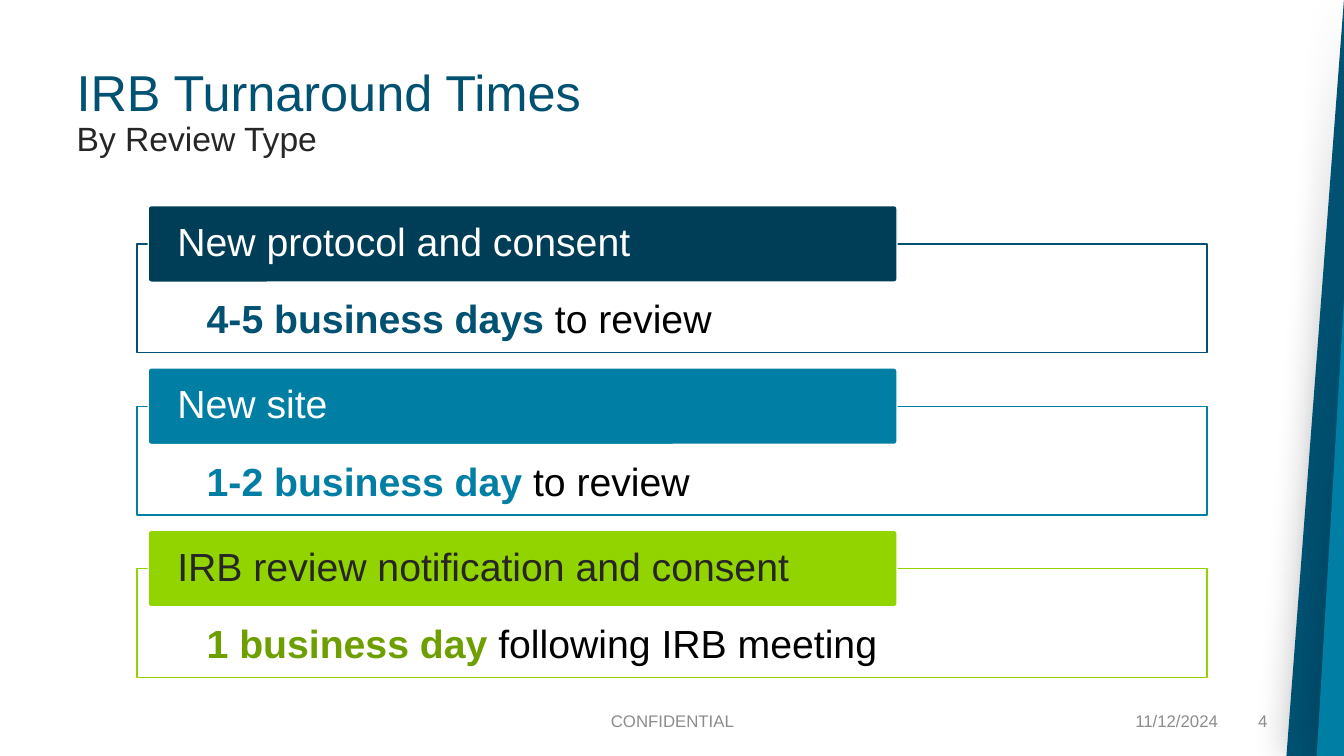
from lxml import etree
from pptx import Presentation
from pptx.dml.color import RGBColor
from pptx.enum.shapes import MSO_SHAPE
from pptx.enum.text import MSO_ANCHOR, MSO_AUTO_SIZE, PP_ALIGN
from pptx.oxml import parse_xml
from pptx.util import Inches, Pt

TRIANGLE, ROUND, RECT = (
    MSO_SHAPE.RIGHT_TRIANGLE, MSO_SHAPE.ROUNDED_RECTANGLE, MSO_SHAPE.RECTANGLE)
MIDDLE, FIXED = MSO_ANCHOR.MIDDLE, MSO_AUTO_SIZE.NONE
LEFT, CENTER, RIGHT = PP_ALIGN.LEFT, PP_ALIGN.CENTER, PP_ALIGN.RIGHT

WHITE = RGBColor(0xFF, 0xFF, 0xFF)
BLACK = RGBColor(0, 0, 0)
INK = RGBColor(0x26, 0x26, 0x26)
GRAY = RGBColor(0x8C, 0x8C, 0x8C)
NAVY = RGBColor(0x00, 0x3D, 0x56)
BLUE = RGBColor(0x00, 0x51, 0x72)
TEAL = RGBColor(0x00, 0x7E, 0xA3)
LIME = RGBColor(0x92, 0xD4, 0x00)
GREEN = RGBColor(0x6E, 0x9F, 0x00)
FONT = "Arial"

GLOW = """<a:effectLst xmlns:a="http://schemas.openxmlformats.org/drawingml/2006/main">
<a:outerShdw blurRad="317500" dist="0" algn="ctr" rotWithShape="0">
<a:srgbClr val="000000"><a:alpha val="25000"/></a:srgbClr></a:outerShdw></a:effectLst>"""

# Heading, bar fill, bar text, frame line, lead text, lead color, rest
REVIEWS = [
    ("New protocol and consent", NAVY, WHITE, BLUE,
     "4-5 business days ", BLUE, "to review"),
    ("New site", TEAL, WHITE, TEAL,
     "1-2 business day ", TEAL, "to review"),
    ("IRB review notification and consent", LIME, INK, LIME,
     "1 business day ", GREEN, "following IRB meeting"),
]


def add_run(para, text, size, color, bold=False):
    run = para.add_run()
    run.text = text
    font = run.font
    font.name, font.size, font.bold = FONT, Pt(size), bold
    font.color.rgb = color


def set_frame(shape, align, inset=(0.1, 0.05, 0.1, 0.05), spacing=0.9):
    frame = shape.text_frame
    frame.word_wrap = True
    frame.auto_size = FIXED
    frame.vertical_anchor = MIDDLE
    frame.margin_left, frame.margin_top, frame.margin_right, frame.margin_bottom = (
        Inches(n) for n in inset)
    para = frame.paragraphs[0]
    para.alignment = align
    para.line_spacing = spacing
    return para


def add_box(slide, kind, box, fill, line=None):
    shape = slide.shapes.add_shape(kind, *(Inches(n) for n in box))
    shape.shadow.inherit = False
    shape.fill.solid()
    shape.fill.fore_color.rgb = fill
    if line is None:
        shape.line.fill.background()
    else:
        shape.line.color.rgb = line
        shape.line.width = Pt(1)
    return shape


def add_edge(slide, right, bottom):
    """Slanted bands along the right side."""
    for width, height, color in [(0.57, 7.5, BLUE), (0.27, 4.53, TEAL)]:
        box = (right - width, bottom - height, width, height)
        band = add_box(slide, TRIANGLE, box, color)
        props = band._element.spPr
        props.xfrm.set("flipH", "1")
        props.remove(props.find("{*}effectLst"))
        props.append(parse_xml(etree.tostring(etree.fromstring(GLOW))))


def add_title(slide, box):
    title = slide.shapes.title
    title.left, title.top, title.width, title.height = (Inches(n) for n in box)
    para = set_frame(title, LEFT)
    add_run(para, "IRB Turnaround Times ", 36, BLUE)
    para.add_line_break()
    add_run(para, "By Review Type", 24, INK)


def add_review(slide, left, top, width, review):
    """Outlined box with a heading bar across its top edge."""
    head, fill, ink, line, lead, accent, rest = review
    body = add_box(slide, RECT, (left, top, width, 1.08), WHITE, line)
    para = set_frame(body, LEFT, (0.69, 0.68, 0.69, 0.23))
    add_run(para, lead, 28, accent, True)
    add_run(para, rest, 28, BLACK)

    bar_box = (left + 0.11, top - 0.38, width * 0.7, 0.76)
    bar = add_box(slide, ROUND, bar_box, fill, WHITE)
    bar.adjustments[0] = 0.04
    para = set_frame(bar, LEFT, (0.28, 0.05, 0.28, 0.05))
    add_run(para, head, 28, ink)


def add_footer(slide, top, height):
    parts = [("CONFIDENTIAL", 4.42, 4.5, CENTER),
             ("11/12/2024", 10.44, 1.74, RIGHT),
             ("4", 12.18, 0.49, RIGHT)]
    for text, left, width, align in parts:
        box = slide.shapes.add_textbox(
            Inches(left), Inches(top), Inches(width), Inches(height))
        add_run(set_frame(box, align, spacing=1.0), text, 12, GRAY)


def main():
    deck = Presentation()
    deck.slide_width, deck.slide_height = Inches(13.33), Inches(7.5)
    slide = deck.slides.add_slide(deck.slide_layouts[5])
    add_edge(slide, 13.33, 7.5)
    add_title(slide, (0.66, 0.4, 12.01, 1.45))
    for row, review in enumerate(REVIEWS):
        add_review(slide, 1.36, 2.42 + row * 1.61, 10.61, review)
    add_footer(slide, 6.95, 0.4)
    deck.save("out.pptx")


if __name__ == "__main__":
    main()
